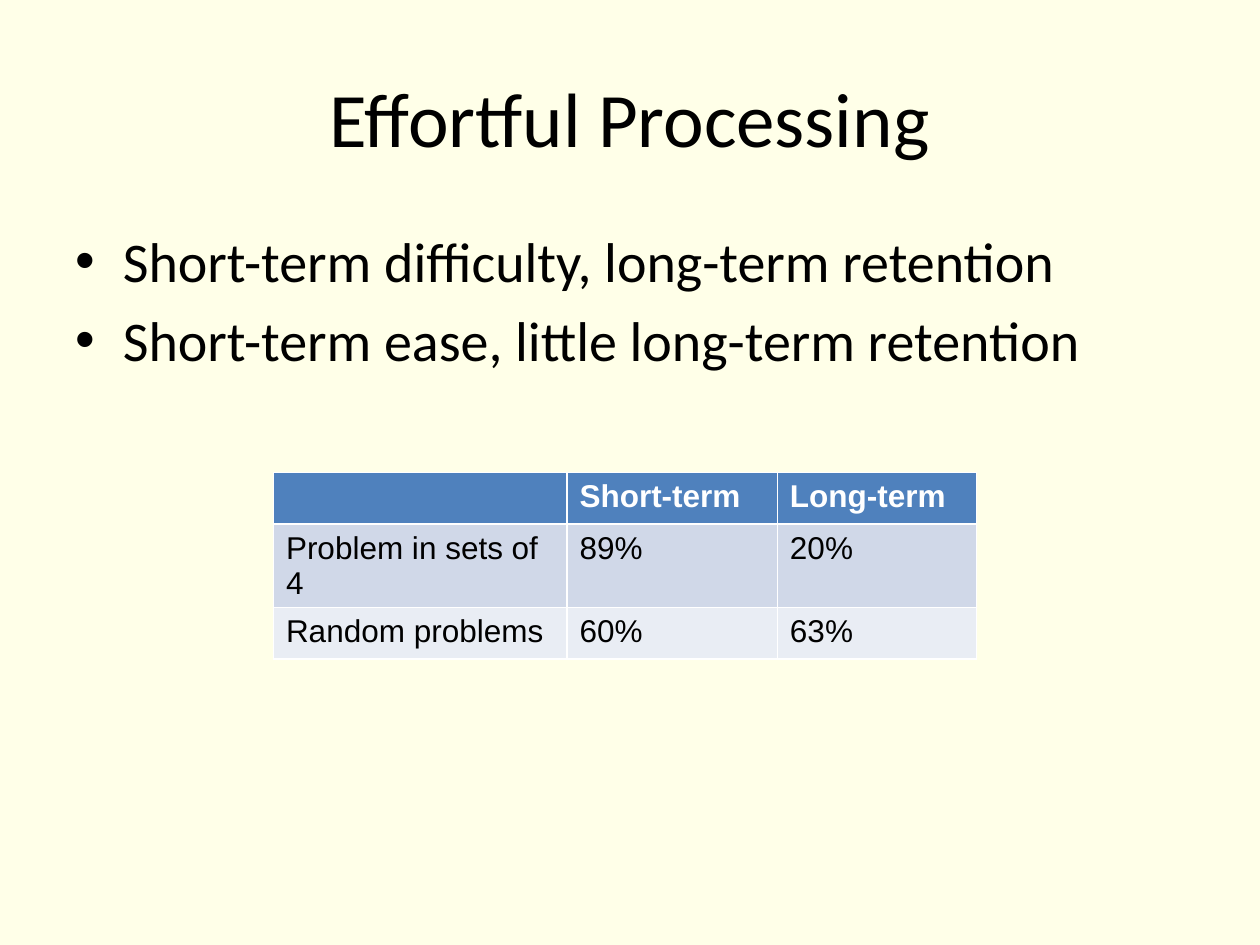
"""Build the Effortful Processing slide with a retention table."""
from dataclasses import dataclass

from pptx import Presentation
from pptx.dml.color import RGBColor
from pptx.enum.text import MSO_ANCHOR, PP_ALIGN
from pptx.util import Inches, Pt

BLACK = RGBColor(0x00, 0x00, 0x00)
WHITE = RGBColor(0xFF, 0xFF, 0xFF)
CREAM = RGBColor(0xFF, 0xFF, 0xE8)
HEADER_BLUE = RGBColor(0x4F, 0x81, 0xBD)
BAND_DARK = RGBColor(0xD0, 0xD8, 0xE8)
BAND_LIGHT = RGBColor(0xE9, 0xED, 0xF4)
SLIDE_WIDTH, SLIDE_HEIGHT = Inches(10), Inches(7.5)
TITLE_AREA = (0.05, 0.04, 0.9, 1 / 6)
BODY_AREA = (0.05, 7 / 30, 0.9, 0.66)
TABLE_AREA = (0.217, 0.5, 0.558, 0.195)
COLUMN_SHARES = (0.233, 0.167, 0.158)


@dataclass(frozen=True)
class TableRow:
    texts: tuple[str, str, str]
    height: float
    fill: RGBColor
    color: RGBColor = BLACK
    bold: bool = False


BULLETS = (
    "Short-term difficulty, long-term retention",
    "Short-term ease, little long-term retention",
)
ROWS = (
    TableRow(("", "Short-term", "Long-term"), 0.41, HEADER_BLUE, WHITE, True),
    TableRow(("Problem in sets of 4", "89%", "20%"), 0.64, BAND_DARK),
    TableRow(("Random problems", "60%", "63%"), 0.41, BAND_LIGHT),
)


def scale_area(area: tuple) -> tuple:
    """Turn shares of the slide into left, top, width and height."""
    sides = (SLIDE_WIDTH, SLIDE_HEIGHT) * 2
    return tuple(round(share * side) for share, side in zip(area, sides))


def format_text(frame, font_name: str, size: int, color: RGBColor, bold: bool = False) -> None:
    """Give every run of a text frame the same font."""
    for para in frame.paragraphs:
        for run in para.runs:
            run.font.name = font_name
            run.font.size = Pt(size)
            run.font.color.rgb = color
            run.font.bold = bold


def fill_placeholder(box, area: tuple, text: str, size: int) -> None:
    """Place a template placeholder and set its text."""
    box.left, box.top, box.width, box.height = scale_area(area)
    box.text_frame.text = text
    format_text(box.text_frame, "Calibri", size, BLACK)


def add_retention_table(page) -> None:
    """Add the table of short-term and long-term results."""
    frame = page.shapes.add_table(len(ROWS), len(COLUMN_SHARES), *scale_area(TABLE_AREA))
    table = frame.table
    for column, share in zip(table.columns, COLUMN_SHARES):
        column.width = round(share * SLIDE_WIDTH)
    for table_row, row in zip(table.rows, ROWS):
        table_row.height = Inches(row.height)
        for cell, text in zip(table_row.cells, row.texts):
            cell.fill.solid()
            cell.fill.fore_color.rgb = row.fill
            cell.text_frame.text = text
            format_text(cell.text_frame, "Arial", 18, row.color, row.bold)


def main() -> None:
    """Build and save the deck."""
    deck = Presentation()
    deck.slide_width, deck.slide_height = SLIDE_WIDTH, SLIDE_HEIGHT
    page = deck.slides.add_slide(deck.slide_layouts[1])
    page.background.fill.solid()
    page.background.fill.fore_color.rgb = CREAM
    title, body = page.placeholders
    fill_placeholder(title, TITLE_AREA, "Effortful Processing", 44)
    title.text_frame.vertical_anchor = MSO_ANCHOR.MIDDLE
    title.text_frame.paragraphs[0].alignment = PP_ALIGN.CENTER
    fill_placeholder(body, BODY_AREA, "\n".join(BULLETS), 32)
    add_retention_table(page)
    deck.save("out.pptx")


if __name__ == "__main__":
    main()
